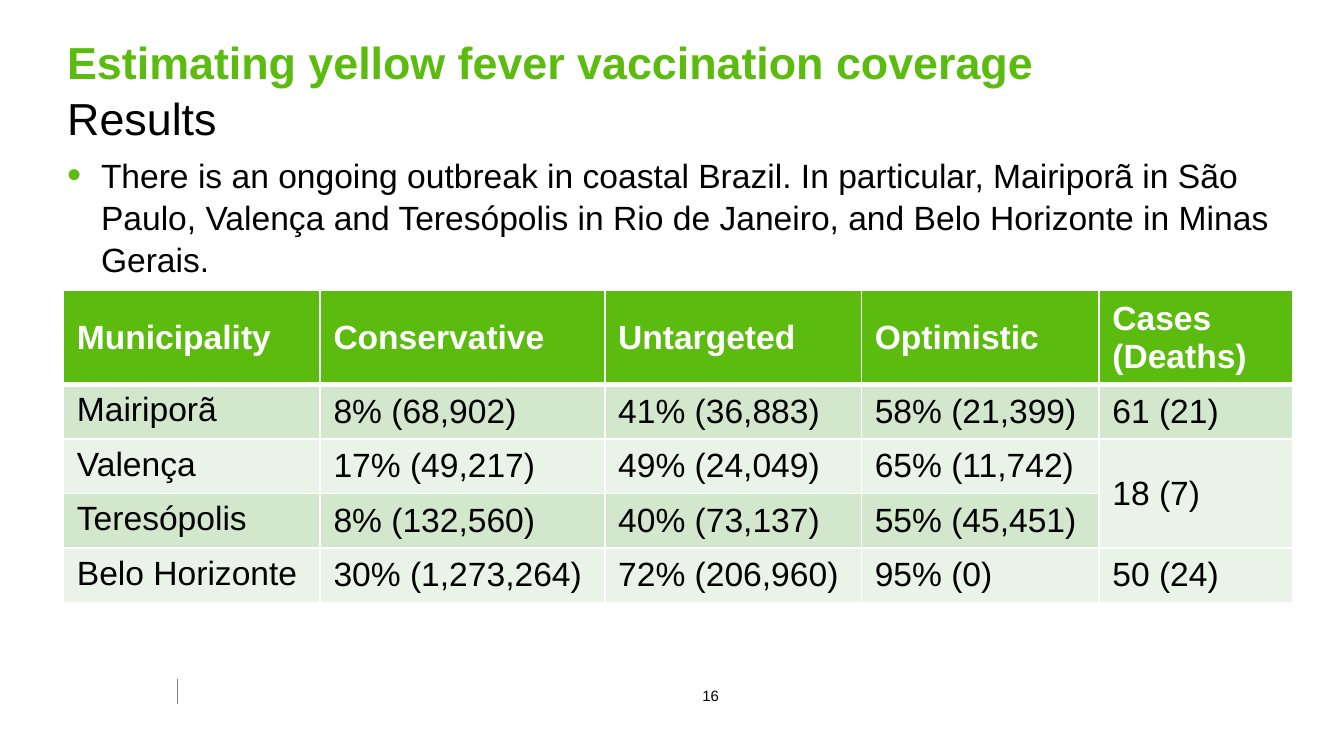
from dataclasses import dataclass

from lxml.etree import SubElement
from pptx import Presentation
from pptx.dml.color import RGBColor
from pptx.enum.shapes import MSO_CONNECTOR as Connector
from pptx.enum.text import MSO_ANCHOR as Anchor, PP_ALIGN as Align
from pptx.oxml.ns import qn
from pptx.util import Cm, Pt

GREEN, BLACK, WHITE, GREY = "5BBB0E", "000000", "FFFFFF", "808080"
BANDS = ("D2E7CC", "EAF3E7")

COLUMN_WIDTHS = (4.85, 5.38, 4.85, 4.49, 3.66)
HEADER_HEIGHT, ROW_HEIGHT = 1.65, 1.03
HEADINGS = ("Municipality", "Conservative", "Untargeted", "Optimistic", "Cases (Deaths)")


@dataclass
class Coverage:
    municipality: str
    conservative: str
    untargeted: str
    optimistic: str
    cases: str  # empty where the cell above covers this row too

    def texts(self) -> tuple:
        return (self.municipality, self.conservative, self.untargeted,
                self.optimistic, self.cases)


COVERAGES = (
    Coverage("Mairiporã", "8% (68,902)", "41% (36,883)", "58% (21,399)", "61 (21)"),
    Coverage("Valença", "17% (49,217)", "49% (24,049)", "65% (11,742)", "18 (7)"),
    Coverage("Teresópolis", "8% (132,560)", "40% (73,137)", "55% (45,451)", ""),
    Coverage("Belo Horizonte", "30% (1,273,264)", "72% (206,960)", "95% (0)", "50 (24)"),
)


def rgb(hex_color: str) -> RGBColor:
    return RGBColor.from_string(hex_color)


def add_run(paragraph, text: str, size: float, color: str = BLACK, bold: bool = False) -> None:
    run = paragraph.add_run()
    run.text = text
    run.font.name = "Arial"
    run.font.size = Pt(size)
    run.font.bold = bold
    run.font.color.rgb = rgb(color)


def add_text_frame(slide, left: float, top: float, width: float, height: float, wrap: bool = True):
    frame = slide.shapes.add_textbox(Cm(left), Cm(top), Cm(width), Cm(height)).text_frame
    frame.word_wrap = wrap
    return frame


def add_bullet(paragraph, color: str) -> None:
    properties = paragraph._p.get_or_add_pPr()
    properties.set("marL", str(Cm(0.64)))
    properties.set("indent", str(Cm(-0.64)))
    SubElement(SubElement(properties, qn("a:buClr")), qn("a:srgbClr"), val=color)
    SubElement(properties, qn("a:buSzPct"), val="120000")
    SubElement(properties, qn("a:buFont"), typeface="Arial")
    SubElement(properties, qn("a:buChar"), char="•")


def add_borders(cell, top: float, bottom: float) -> None:
    """Draw white borders; the side ones are always 1 pt. Call before filling the cell."""
    properties = cell._tc.get_or_add_tcPr()
    for side, points in (("L", 1), ("R", 1), ("T", top), ("B", bottom)):
        line = SubElement(properties, qn(f"a:ln{side}"), w=str(Pt(points)))
        SubElement(SubElement(line, qn("a:solidFill")), qn("a:srgbClr"), val=WHITE)


def fill_row(table, row: int, texts: tuple, fill: str, color: str, bold: bool) -> None:
    for column, text in enumerate(texts):
        cell = table.cell(row, column)
        add_borders(cell, top=3 if row == 1 else 1, bottom=3 if row == 0 else 1)
        cell.fill.solid()
        cell.fill.fore_color.rgb = rgb(fill)
        cell.vertical_anchor = Anchor.TOP if row and column == 0 else Anchor.MIDDLE
        if text:
            add_run(cell.text_frame.paragraphs[0], text, 18, color, bold)


def add_coverage_table(slide) -> None:
    height = HEADER_HEIGHT + ROW_HEIGHT * len(COVERAGES)
    table = slide.shapes.add_table(len(COVERAGES) + 1, len(HEADINGS), Cm(1.2), Cm(5.49),
                                   Cm(sum(COLUMN_WIDTHS)), Cm(height)).table
    for column, width in zip(table.columns, COLUMN_WIDTHS):
        column.width = Cm(width)
    for row in table.rows:
        row.height = Cm(ROW_HEIGHT)
    table.rows[0].height = Cm(HEADER_HEIGHT)

    fill_row(table, 0, HEADINGS, GREEN, WHITE, bold=True)
    for row, coverage in enumerate(COVERAGES, start=1):
        fill_row(table, row, coverage.texts(), BANDS[(row - 1) % 2], BLACK, bold=False)
        if not coverage.cases:
            table.cell(row - 1, 4).merge(table.cell(row, 4))


def add_footer(slide) -> None:
    divider = slide.shapes.add_connector(Connector.STRAIGHT, Cm(3.35), Cm(12.83),
                                         Cm(3.35), Cm(13.31))
    divider.line.color.rgb = rgb(GREY)
    divider.line.width = Pt(0.25)
    SubElement(divider._element.spPr, qn("a:effectLst"))

    page_number = add_text_frame(slide, 13, 12.85, 0.86, 0.61, wrap=False).paragraphs[0]
    page_number.alignment = Align.CENTER
    add_run(page_number, "16", 8)


def main() -> None:
    presentation = Presentation()
    presentation.slide_width, presentation.slide_height = Cm(25.4), Cm(14.29)
    slide = presentation.slides.add_slide(presentation.slide_layouts[6])

    title = add_text_frame(slide, 1.02, 0.48, 22.76, 2.31).paragraphs[0]
    title.line_spacing = 1.05
    add_run(title, "Estimating yellow fever vaccination coverage", 24, GREEN, bold=True)
    title.add_line_break()
    add_run(title, "Results", 24)

    outbreak = add_text_frame(slide, 1.02, 2.77, 23.57, 9.3).paragraphs[0]
    add_bullet(outbreak, GREEN)
    outbreak.line_spacing = 1.04
    add_run(outbreak, "There is an ongoing outbreak in coastal Brazil. In particular, Mairiporã "
            "in São Paulo, Valença and Teresópolis in Rio de Janeiro, and Belo Horizonte in "
            "Minas Gerais.", 18)

    add_coverage_table(slide)
    add_footer(slide)
    presentation.save("out.pptx")


if __name__ == "__main__":
    main()
